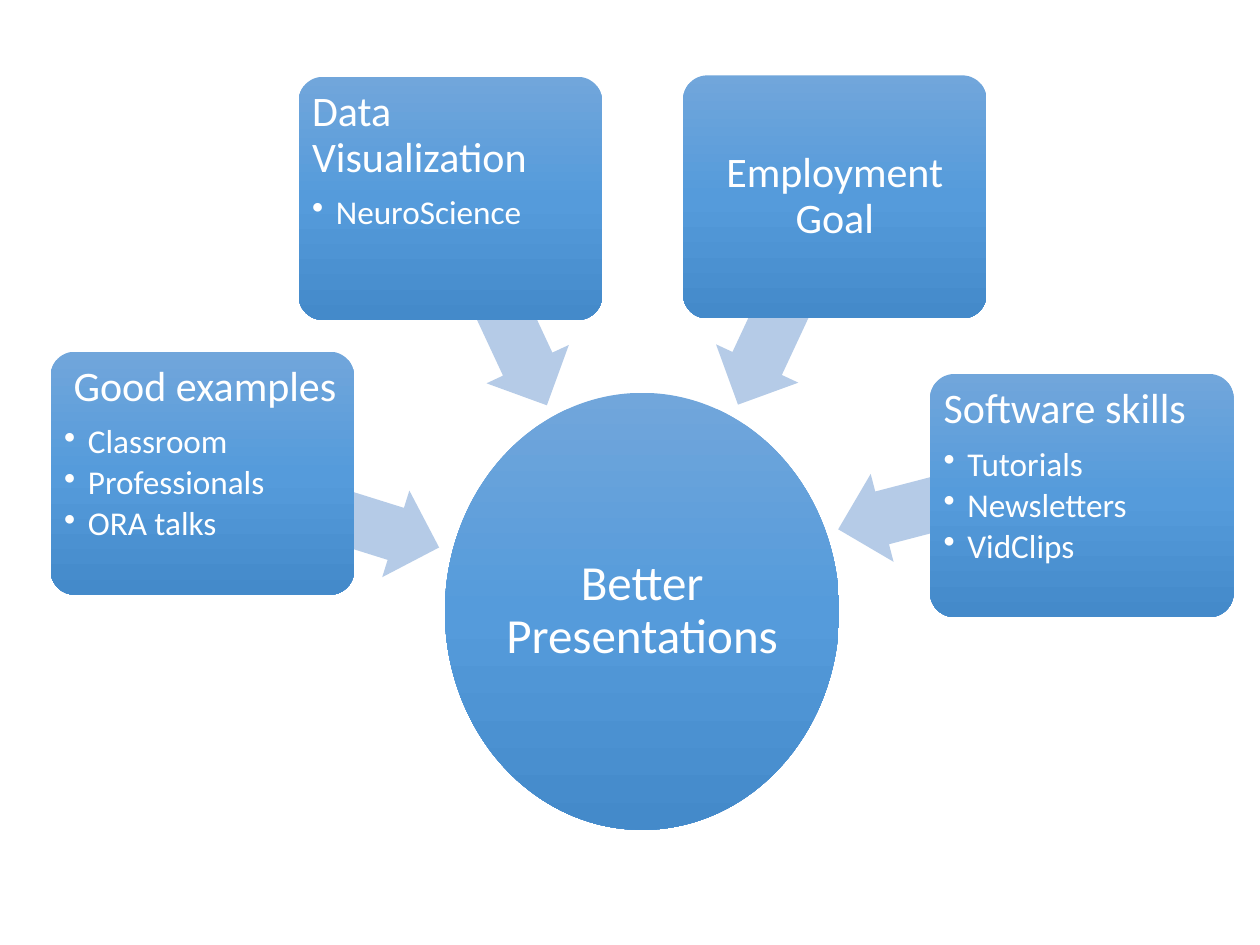
import copy
import math

from pptx import Presentation
from pptx import util as u
from pptx.dml.color import RGBColor
from pptx.enum import shapes, text
from pptx.oxml.ns import qn

WHITE = RGBColor(0xFF, 0xFF, 0xFF)
ARROW_BLUE = RGBColor(0xB5, 0xCB, 0xE7)
GRADIENT = [
    (0, RGBColor(0x71, 0xA6, 0xDB)),
    (0.5, RGBColor(0x55, 0x9B, 0xDB)),
    (1, RGBColor(0x44, 0x8A, 0xCA)),
]
FONT = "Calibri"

# Lengths in centimetres
CARD_WIDTH, CARD_HEIGHT = 6.12, 4.9
ARROW_HEIGHT = 1.83
BULLET_INDENT = 0.48

# Heading, bullets, left, top, arrow length, arrow rotation, arrow tail offset
CARDS = [
    (" Good examples", ["Classroom", "Professionals", "ORA talks"],
     1.02, 7.09, 5.0, 197.4, (0, 0)),
    ("Data Visualization", ["NeuroScience"], 6.02, 1.55, 4.6, 245, (0, 0)),
    ("Employment Goal", [], 13.77, 1.52, 4.62, 295, (0, 0)),
    ("Software skills", ["Tutorials", "Newsletters", "VidClips"],
     18.75, 7.54, 4.88, 345.4, (-0.19, -0.55)),
]


def add_plain_shape(slide, kind, left, top, width, height):
    shape = slide.shapes.add_shape(
        kind, u.Cm(left), u.Cm(top), u.Cm(width), u.Cm(height))
    shape.shadow.inherit = False
    shape.line.fill.background()
    return shape


def fill_gradient(shape):
    """Shade from top to bottom through all the gradient colours."""
    fill = shape.fill
    fill.gradient()
    fill.gradient_angle = 270
    first_stop = shape.element.spPr.find(".//" + qn("a:gs"))
    first_stop.addnext(copy.deepcopy(first_stop))
    for stop, (position, color) in zip(fill.gradient_stops, GRADIENT):
        stop.position = position
        stop.color.rgb = color


def prepare_frame(shape, margin, anchor):
    frame = shape.text_frame
    frame.word_wrap = True
    frame.vertical_anchor = anchor
    frame.margin_left = frame.margin_right = u.Cm(margin)
    frame.margin_top = frame.margin_bottom = u.Cm(margin)
    return frame


def write_paragraph(paragraph, words, size, alignment, gap):
    """Write one line; gap is the space after as a share of the size."""
    paragraph.alignment = alignment
    paragraph.line_spacing = 0.9
    paragraph.space_after = u.Pt(round(size * gap, 1))
    run = paragraph.add_run()
    run.text = words
    run.font.size = u.Pt(size)
    run.font.name = FONT
    run.font.color.rgb = WHITE


def add_bullet(frame, words):
    paragraph = frame.add_paragraph()
    paragraph.level = 1
    write_paragraph(paragraph, words, 19, text.PP_ALIGN.LEFT, 0.15)
    properties = paragraph._p.get_or_add_pPr()
    properties.set("marL", str(u.Cm(BULLET_INDENT)))
    properties.set("indent", str(-u.Cm(BULLET_INDENT)))
    bullet = properties.makeelement(qn("a:buChar"), {"char": "•"})
    properties.append(bullet)


def add_hub(slide):
    hub = add_plain_shape(slide, shapes.MSO_SHAPE.OVAL, 8.97, 7.92, 7.95, 8.81)
    fill_gradient(hub)
    frame = prepare_frame(hub, 0.05, text.MSO_ANCHOR.MIDDLE)
    write_paragraph(frame.paragraphs[0], "Better Presentations", 28,
                    text.PP_ALIGN.CENTER, 0.35)


def add_arrow(slide, tail_x, tail_y, length, rotation):
    """Place a left arrow so that its rotated tail meets the given point."""
    angle = math.radians(rotation)
    center_x = tail_x - length / 2 * math.cos(angle)
    center_y = tail_y - length / 2 * math.sin(angle)
    arrow = add_plain_shape(
        slide, shapes.MSO_SHAPE.LEFT_ARROW, center_x - length / 2,
        center_y - ARROW_HEIGHT / 2, length, ARROW_HEIGHT)
    arrow.rotation = rotation
    arrow.adjustments[0] = 0.6
    arrow.adjustments[1] = 0.5
    arrow.fill.solid()
    arrow.fill.fore_color.rgb = ARROW_BLUE


def add_card(slide, heading, bullets, left, top):
    card = add_plain_shape(slide, shapes.MSO_SHAPE.ROUNDED_RECTANGLE,
                           left, top, CARD_WIDTH, CARD_HEIGHT)
    card.adjustments[0] = 0.1
    fill_gradient(card)
    # A heading on its own is centred in the card
    if bullets:
        anchor, alignment = text.MSO_ANCHOR.TOP, text.PP_ALIGN.LEFT
    else:
        anchor, alignment = text.MSO_ANCHOR.MIDDLE, text.PP_ALIGN.CENTER
    frame = prepare_frame(card, 0.13, anchor)
    write_paragraph(frame.paragraphs[0], heading, 24, alignment, 0.35)
    for words in bullets:
        add_bullet(frame, words)


def main():
    presentation = Presentation()
    presentation.slide_width = u.Cm(25.4)
    presentation.slide_height = u.Cm(19.05)
    slide = presentation.slides.add_slide(presentation.slide_layouts[6])

    # Central idea
    add_hub(slide)

    # Contributing ideas, each arrow behind its card
    for heading, bullets, left, top, length, rotation, offset in CARDS:
        add_arrow(slide, left + CARD_WIDTH / 2 + offset[0],
                  top + CARD_HEIGHT / 2 + offset[1], length, rotation)
        add_card(slide, heading, bullets, left, top)

    presentation.save("out.pptx")


if __name__ == "__main__":
    main()
